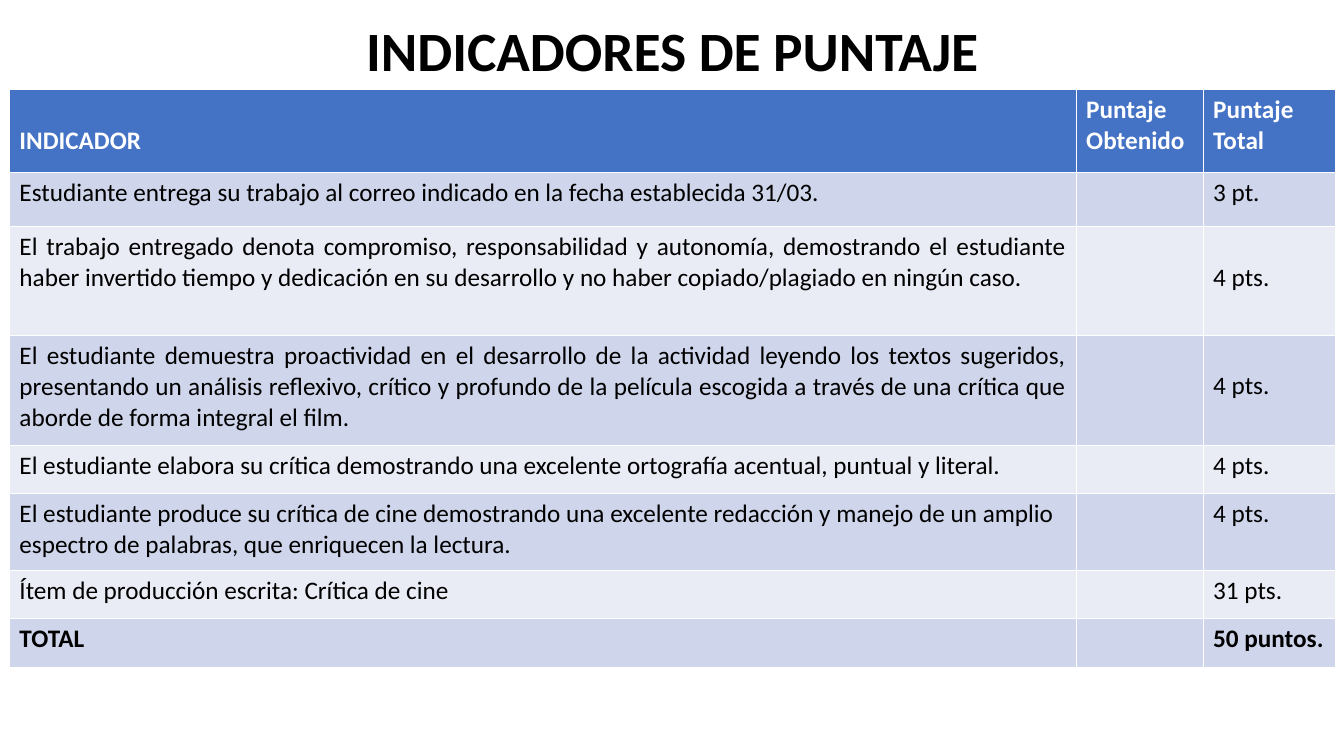
from pptx import Presentation
from pptx.dml.color import RGBColor
from pptx.enum.text import MSO_ANCHOR, PP_ALIGN
from pptx.util import Inches, Pt

LEFT, CENTER, JUSTIFY = PP_ALIGN.LEFT, PP_ALIGN.CENTER, PP_ALIGN.JUSTIFY
TOP, MIDDLE = MSO_ANCHOR.TOP, MSO_ANCHOR.MIDDLE

SLIDE_WIDTH, SLIDE_HEIGHT = Inches(13.33), Inches(7.5)
HEADER_FILL = "4472C4"
BAND_FILLS = ("CFD5EA", "E9EBF5")
TITLE_FONT = {"name": "Calibri", "size": Pt(39.6), "bold": True}
BODY_FONT = {"name": "Calibri", "size": Pt(18), "bold": False}
BOLD_FONT = {**BODY_FONT, "bold": True}

TOP_MARGIN = Inches(0.05)
LOWERED_MARGIN = Inches(0.35)  # one text line lower

# Shares of the slide's size, in percent
COLUMN_WIDTHS = (79.37, 9.45, 9.83)
ROW_HEIGHTS = (10.93, 7.2, 14.4, 14.53, 6.4, 10.13, 6.4, 6.4)

HEADER = ("INDICADOR", "Puntaje Obtenido", "Puntaje Total")
# Indicator, total score, alignment of the indicator
INDICATORS = (
    ("Estudiante entrega su trabajo al correo indicado en la fecha establecida 31/03.",
     "3 pt.", LEFT),
    ("El trabajo entregado denota compromiso, responsabilidad y autonomía, demostrando "
     "el estudiante haber invertido tiempo y dedicación en su desarrollo y no haber "
     "copiado/plagiado en ningún caso.", "4 pts.", JUSTIFY),
    ("El estudiante demuestra proactividad en el desarrollo de la actividad leyendo los "
     "textos sugeridos, presentando un análisis reflexivo, crítico y profundo de la "
     "película escogida a través de una crítica que aborde de forma integral el film.",
     "4 pts.", JUSTIFY),
    ("El estudiante elabora su crítica demostrando una excelente ortografía acentual, "
     "puntual y literal.", "4 pts.", LEFT),
    ("El estudiante produce su crítica de cine demostrando una excelente redacción y "
     "manejo de un amplio espectro de palabras, que enriquecen la lectura.",
     "4 pts.", LEFT),
    ("Ítem de producción escrita: Crítica de cine", "31 pts.", LEFT),
    ("TOTAL", "50 puntos.", LEFT),
)


def across(percent):
    return round(SLIDE_WIDTH * percent / 100)


def down(percent):
    return round(SLIDE_HEIGHT * percent / 100)


def color(hex_value):
    return RGBColor.from_string(hex_value)


def format_text(paragraph, font_values, hex_value, alignment):
    paragraph.alignment = alignment
    for name, value in font_values.items():
        setattr(paragraph.font, name, value)
    paragraph.font.color.rgb = color(hex_value)


def add_title(slide, text):
    title = slide.shapes.title
    box = {"left": across(6.9), "top": down(2.27),
           "width": across(86.27), "height": down(9.6)}
    for name, value in box.items():
        setattr(title, name, value)
    title.text_frame.text = text
    title.text_frame.vertical_anchor = MIDDLE
    paragraph = title.text_frame.paragraphs[0]
    paragraph.line_spacing = 0.9
    format_text(paragraph, TITLE_FONT, "000000", CENTER)


def fill_cell(cell, text, fill, font_values, hex_value="000000",
              alignment=LEFT, lowered=False):
    cell.fill.solid()
    cell.fill.fore_color.rgb = color(fill)
    cell.vertical_anchor = TOP
    cell.margin_top = LOWERED_MARGIN if lowered else TOP_MARGIN
    cell.text = text
    format_text(cell.text_frame.paragraphs[0], font_values, hex_value, alignment)


def add_score_table(slide):
    frame = slide.shapes.add_table(
        len(ROW_HEIGHTS), len(COLUMN_WIDTHS), across(0.7), down(11.87),
        across(sum(COLUMN_WIDTHS)), down(sum(ROW_HEIGHTS)))
    table = frame.table
    for column, width in zip(table.columns, COLUMN_WIDTHS):
        column.width = across(width)
    for row, height in zip(table.rows, ROW_HEIGHTS):
        row.height = down(height)

    for index, text in enumerate(HEADER):
        fill_cell(table.cell(0, index), text, HEADER_FILL, BOLD_FONT, "FFFFFF",
                  lowered=index == 0)
    for index, (indicator, score, alignment) in enumerate(INDICATORS):
        fill = BAND_FILLS[index % 2]
        font_values = BOLD_FONT if indicator == "TOTAL" else BODY_FONT
        indicator_cell, obtained_cell, score_cell = table.rows[index + 1].cells
        fill_cell(indicator_cell, indicator, fill, font_values, alignment=alignment)
        fill_cell(obtained_cell, "", fill, font_values)
        fill_cell(score_cell, score, fill, font_values, lowered=alignment == JUSTIFY)


def main():
    presentation = Presentation()
    presentation.slide_width = SLIDE_WIDTH
    presentation.slide_height = SLIDE_HEIGHT
    title_only = presentation.slide_layouts[5]
    slide = presentation.slides.add_slide(title_only)
    add_title(slide, "INDICADORES DE PUNTAJE")
    add_score_table(slide)
    presentation.save("out.pptx")


if __name__ == "__main__":
    main()
